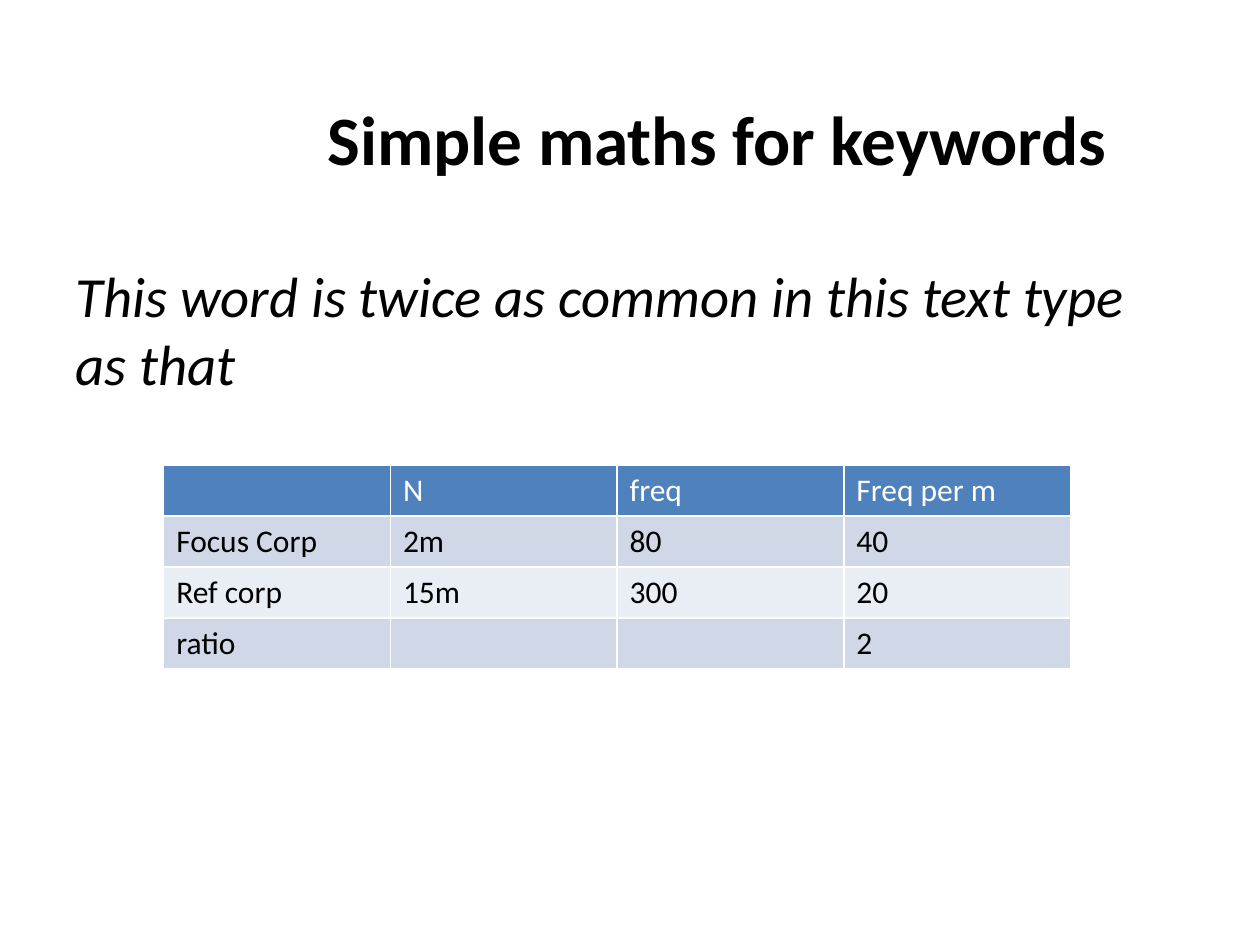
import pptx
import pptx.dml.color
import pptx.enum.text
import pptx.oxml.xmlchemy
import pptx.util
from lxml import etree
from pptx.util import Cm

FONT = "Calibri"
COLOURS = {
    "text": "000000",
    "header": "4F81BD",
    "header text": "FFFFFF",
    "odd row": "D0D8E8",
    "even row": "E9EDF4",
}
ROWS = [
    ["", "N", "freq", "Freq per m"],
    ["Focus Corp", "2m", "80", "40"],
    ["Ref corp", "15m", "300", "20"],
    ["ratio", "", "", "2"],
]
COLUMN_WIDTH = Cm(4.57)
ROW_HEIGHT = Cm(1.03)


def rgb(name):
    return pptx.dml.color.RGBColor.from_string(COLOURS[name])


def format_paragraph(para, size, colour, bold=False, italic=False):
    font = para.font
    font.name = FONT
    font.size = pptx.util.Pt(size)
    font.bold = bold
    font.italic = italic
    font.color.rgb = rgb(colour)


def fill_placeholder(box, text, position, anchor, size, **style):
    """Move a placeholder and give it one left-aligned, unbulleted paragraph."""
    box.left, box.top, box.width, box.height = position
    frame = box.text_frame
    frame.text = text
    frame.word_wrap = True
    frame.auto_size = pptx.enum.text.MSO_AUTO_SIZE.NONE
    frame.vertical_anchor = anchor
    para = frame.paragraphs[0]
    para.alignment = pptx.enum.text.PP_ALIGN.LEFT
    para.space_before = pptx.util.Pt(0)
    format_paragraph(para, size, "text", **style)
    properties = para._p.get_or_add_pPr()
    properties.set("marL", "0")
    properties.set("indent", "0")
    bullet = etree.Element(pptx.oxml.ns.qn("a:buNone"))
    properties.find(pptx.oxml.ns.qn("a:spcBef")).addnext(bullet)
    return frame


def add_frequency_table(page, left, top):
    row_count, column_count = len(ROWS), len(ROWS[0])
    table = page.shapes.add_table(
        row_count, column_count, left, top,
        COLUMN_WIDTH * column_count, ROW_HEIGHT * row_count).table
    for row_index, row in enumerate(ROWS):
        if row_index == 0:
            fill, text_colour = "header", "header text"
        else:
            fill = "odd row" if row_index % 2 else "even row"
            text_colour = "text"
        for column_index, text in enumerate(row):
            cell = table.cell(row_index, column_index)
            cell.text = text
            cell.fill.solid()
            cell.fill.fore_color.rgb = rgb(fill)
            format_paragraph(cell.text_frame.paragraphs[0], 18, text_colour)


def main():
    deck = pptx.Presentation()
    deck.slide_width, deck.slide_height = Cm(25.4), Cm(19.05)
    page = deck.slides.add_slide(deck.slide_layouts[1])
    anchors = pptx.enum.text.MSO_ANCHOR

    # Title, set in from the left
    title = fill_placeholder(
        page.shapes.title, "Simple maths for keywords",
        (Cm(1.27), Cm(0.76), Cm(22.86), Cm(3.18)), anchors.BOTTOM, 39.6, bold=True)
    title.margin_left = Cm(5.33)
    title.margin_bottom = Cm(0.33)

    # Example claim
    fill_placeholder(
        page.placeholders[1], "This word is twice as common in this text type as that",
        (Cm(1.27), Cm(5.13), Cm(22.5), Cm(3.05)), anchors.TOP, 32.4, italic=True)

    # Frequencies per corpus
    add_frequency_table(page, Cm(3.3), Cm(9.37))

    deck.save("out.pptx")


if __name__ == "__main__":
    main()
